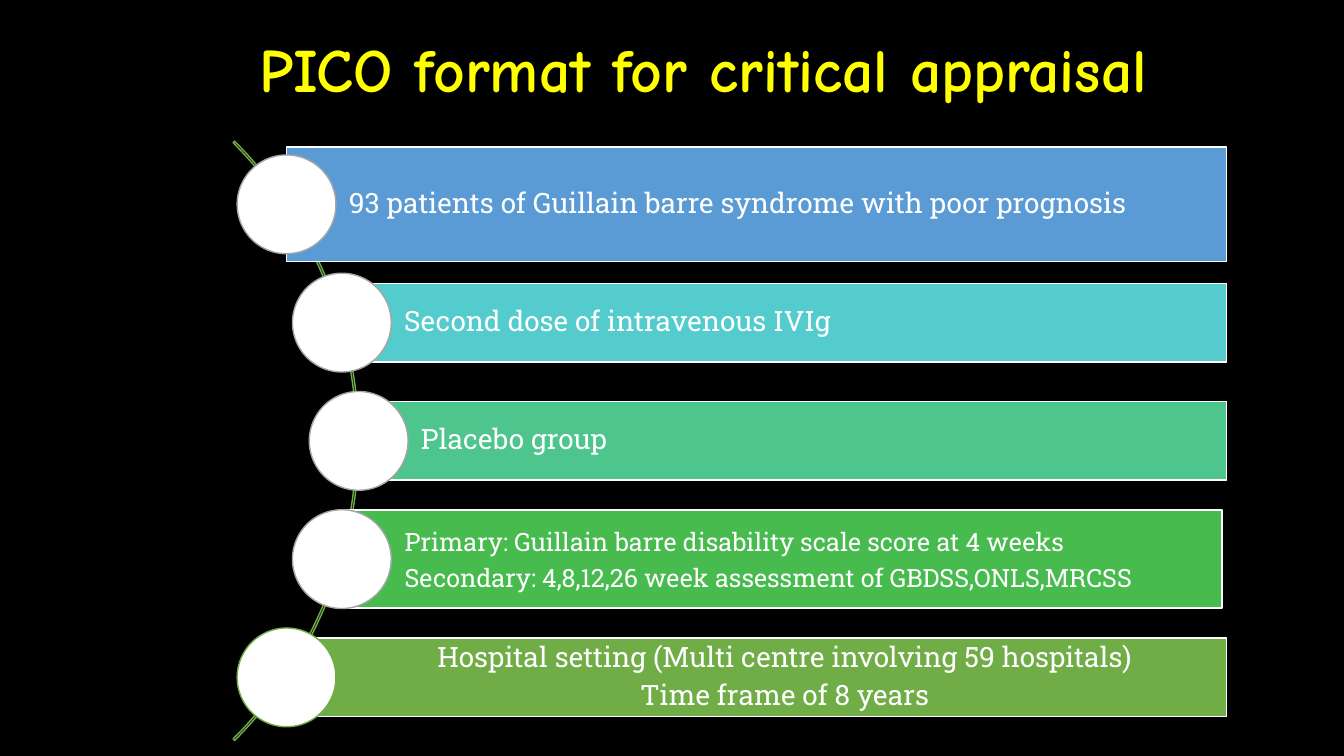
import math

import pptx
import pptx.dml.color
import pptx.enum.shapes
import pptx.enum.text
import pptx.util
from pptx.util import Cm, Pt

SHAPES = pptx.enum.shapes.MSO_SHAPE
ALIGN = pptx.enum.text.PP_ALIGN
MIDDLE = pptx.enum.text.MSO_ANCHOR.MIDDLE

TITLE = "PICO format for critical appraisal"
WHITE, GREY, GREEN = "FFFFFF", "A5A5A5", "70AD47"

BARS = [
    {"lines": ["93 patients of Guillain barre syndrome with poor prognosis"],
     "fill": "5B9BD5", "height": 2.89},
    {"lines": ["Second dose of intravenous IVIg"], "fill": "54CCCD"},
    {"lines": ["Placebo group"], "fill": "4DC58D"},
    {"lines": ["Primary: Guillain barre disability scale score at 4 weeks",
               "Secondary: 4,8,12,26 week assessment of GBDSS,ONLS,MRCSS"],
     "fill": "48BB4F", "height": 2.47, "left": 8.63, "right": 30.8,
     "size": 18, "line_spacing": 1.0, "gap": 4},
    {"lines": ["Hospital setting (Multi centre involving 59 hospitals)",
               "Time frame of 8 years"],
     "fill": GREEN, "align": ALIGN.CENTER, "circle_line": GREEN},
]

# Lengths in centimetres
ARC_X, ARC_Y, ARC_RADIUS = -1.64, 11.11, 10.68
PITCH = 2.98
CIRCLE = 2.49
BAR_HEIGHT, BAR_RIGHT = 1.98, 30.91


def color(hex_string):
    return pptx.dml.color.RGBColor.from_string(hex_string)


def add_shape(slide, kind, left, top, width, height, fill, line):
    shape = slide.shapes.add_shape(kind, Cm(left), Cm(top), Cm(width), Cm(height))
    shape.shadow.inherit = False
    if fill:
        shape.fill.solid()
        shape.fill.fore_color.rgb = color(fill)
    else:
        shape.fill.background()
    shape.line.color.rgb = color(line)
    shape.line.width = Pt(1)
    return shape


def add_title(slide):
    title = slide.shapes.title
    title.left, title.top, title.width, title.height = Cm(3.12), Cm(0), Cm(29.21), Cm(3.68)
    title.text_frame.text = TITLE
    title.text_frame.vertical_anchor = MIDDLE
    paragraph = title.text_frame.paragraphs[0]
    paragraph.alignment = ALIGN.CENTER
    paragraph.line_spacing = 0.9
    paragraph.font.name = "Comic Neue"
    paragraph.font.size = Pt(44)
    paragraph.font.bold = True
    paragraph.font.color.rgb = color("FFFF00")


def write_lines(shape, bar):
    frame = shape.text_frame
    frame.word_wrap = True
    frame.vertical_anchor = MIDDLE
    frame.margin_left = Cm(1.57)
    frame.margin_right = frame.margin_top = frame.margin_bottom = Cm(0.14)
    for index, line in enumerate(bar["lines"]):
        paragraph = frame.add_paragraph() if index else frame.paragraphs[0]
        paragraph.text = line
        paragraph.alignment = bar.get("align", ALIGN.LEFT)
        paragraph.line_spacing = bar.get("line_spacing", 0.9)
        paragraph.space_after = Pt(bar.get("gap", 5))
        paragraph.font.name = "Roboto Slab"
        paragraph.font.size = Pt(bar.get("size", 20))
        paragraph.font.color.rgb = color(WHITE)


def add_arc(slide):
    arc = add_shape(slide, SHAPES.BLOCK_ARC, ARC_X - ARC_RADIUS, ARC_Y - ARC_RADIUS,
                    2 * ARC_RADIUS, 2 * ARC_RADIUS, None, GREEN)
    # Start and end angles (315 and 45 degrees), then band thickness
    for index, value in enumerate((189, 27, 0.0026)):
        arc.adjustments[index] = value


def add_bars(slide):
    """Place the bars so that their circles are centred on the arc."""
    for index, bar in enumerate(BARS):
        offset = (index - (len(BARS) - 1) / 2) * PITCH
        center_x = ARC_X + math.sqrt(ARC_RADIUS ** 2 - offset ** 2)
        center_y = ARC_Y + offset
        left = bar.get("left", center_x)
        height = bar.get("height", BAR_HEIGHT)
        shape = add_shape(slide, SHAPES.RECTANGLE, left, center_y - height / 2,
                          bar.get("right", BAR_RIGHT) - left, height, bar["fill"], WHITE)
        write_lines(shape, bar)
        add_shape(slide, SHAPES.OVAL, center_x - CIRCLE / 2, center_y - CIRCLE / 2,
                  CIRCLE, CIRCLE, WHITE, bar.get("circle_line", GREY))


def main():
    presentation = pptx.Presentation()
    presentation.slide_width, presentation.slide_height = Cm(33.87), Cm(19.05)
    slide = presentation.slides.add_slide(presentation.slide_layouts[5])
    slide.background.fill.solid()
    slide.background.fill.fore_color.rgb = color("000000")
    add_title(slide)
    add_arc(slide)
    add_bars(slide)
    presentation.save("out.pptx")


if __name__ == "__main__":
    main()
